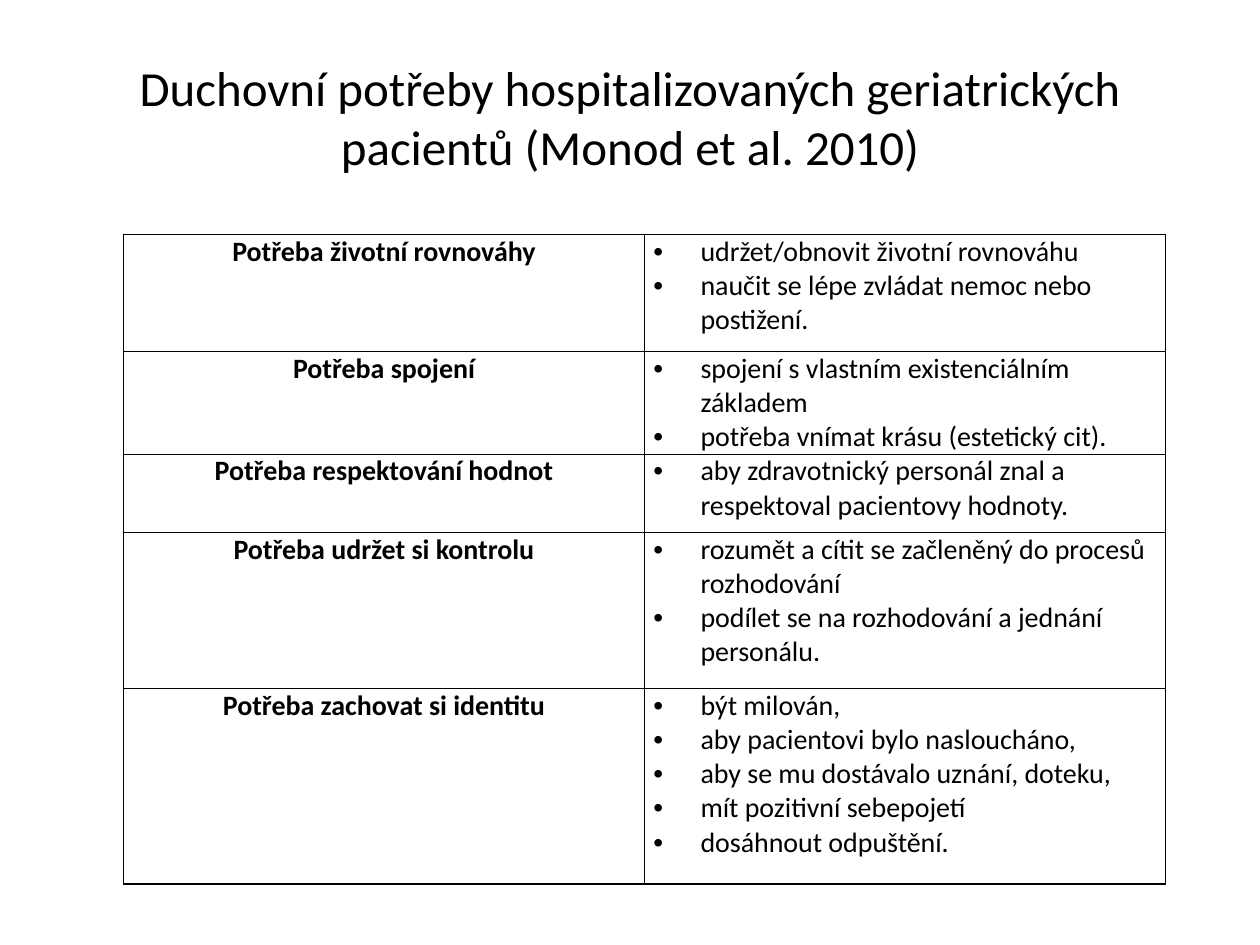
from lxml import etree
from pptx import Presentation
from pptx.dml.color import RGBColor
from pptx.enum.text import MSO_ANCHOR, PP_ALIGN
from pptx.oxml.ns import qn
from pptx.util import Pt

LEFT, MID = PP_ALIGN.LEFT, PP_ALIGN.CENTER
TOP, MIDDLE = MSO_ANCHOR.TOP, MSO_ANCHOR.MIDDLE
FONT = "Calibri"
HUES = {"ink": "000000", "paper": "FFFFFF"}

TITLE = "Duchovní potřeby hospitalizovaných geriatrických pacientů (Monod et al. 2010)"
NEEDS = [
    (67, "Potřeba životní rovnováhy",
     ["udržet/obnovit životní rovnováhu",
      "naučit se lépe zvládat nemoc nebo postižení."]),
    (58.6, "Potřeba spojení",
     ["spojení s vlastním existenciálním základem",
      "potřeba vnímat krásu (estetický cit)."]),
    (44.6, "Potřeba respektování hodnot",
     ["aby zdravotnický personál znal a respektoval pacientovy hodnoty."]),
    (89.3, "Potřeba udržet si kontrolu",
     ["rozumět a cítit se začleněný do procesů rozhodování",
      "podílet se na rozhodování a jednání personálu."]),
    (111.6, "Potřeba zachovat si identitu",
     ["být milován,",
      "aby pacientovi bylo nasloucháno,",
      "aby se mu dostávalo uznání, doteku,",
      "mít pozitivní sebepojetí",
      "dosáhnout odpuštění."]),
]


def hue(name):
    return RGBColor.from_string(HUES[name])


def write(para, text, size=16, bold=False, align=LEFT, color="ink"):
    para.alignment = align
    run = para.add_run()
    run.text = text
    font = run.font
    font.name, font.size, font.bold = FONT, Pt(size), bold
    font.color.rgb = hue(color)


def bullet(para, indent=27):
    props = para._p.get_or_add_pPr()
    props.set("marL", str(Pt(indent)))
    props.set("indent", str(-Pt(indent)))
    etree.SubElement(props, qn("a:buFont"), typeface="Arial")
    etree.SubElement(props, qn("a:buChar"), char="•")


def border(cell, width=1):
    props = cell._tc.get_or_add_tcPr()
    for spot, side in enumerate(("lnL", "lnR", "lnT", "lnB")):
        line = etree.Element(qn("a:" + side), w=str(Pt(width)))
        fill = etree.SubElement(line, qn("a:solidFill"))
        etree.SubElement(fill, qn("a:srgbClr"), val=HUES["ink"])
        props.insert(spot, line)


def style(cell):
    cell.fill.solid()
    cell.fill.fore_color.rgb = hue("paper")
    cell.margin_left = cell.margin_right = Pt(5)
    cell.margin_top = cell.margin_bottom = 0
    cell.vertical_anchor = TOP
    border(cell)


def add_title(slide):
    title = slide.shapes.title
    title.left, title.top = Pt(36), Pt(21.6)
    title.width, title.height = Pt(648), Pt(90)
    frame = title.text_frame
    frame.vertical_anchor = MIDDLE
    write(frame.paragraphs[0], TITLE, size=28, align=MID)


def add_needs(slide):
    total = sum(need[0] for need in NEEDS)
    table = slide.shapes.add_table(
        len(NEEDS), 2, Pt(70.6), Pt(133.9), Pt(595.4), Pt(total)).table
    table.first_row = table.horz_banding = False
    for row, (height, name, items) in zip(table.rows, NEEDS):
        row.height = Pt(height)
        head, body = row.cells
        style(head)
        style(body)
        write(head.text_frame.paragraphs[0], name, bold=True, align=MID)
        frame = body.text_frame
        for spot, item in enumerate(items):
            para = frame.add_paragraph() if spot else frame.paragraphs[0]
            write(para, item)
            bullet(para)


def main():
    deck = Presentation()
    deck.slide_width, deck.slide_height = Pt(720), Pt(540)
    slide = deck.slides.add_slide(deck.slide_layouts[5])
    add_title(slide)
    add_needs(slide)
    deck.save("out.pptx")


if __name__ == "__main__":
    main()
